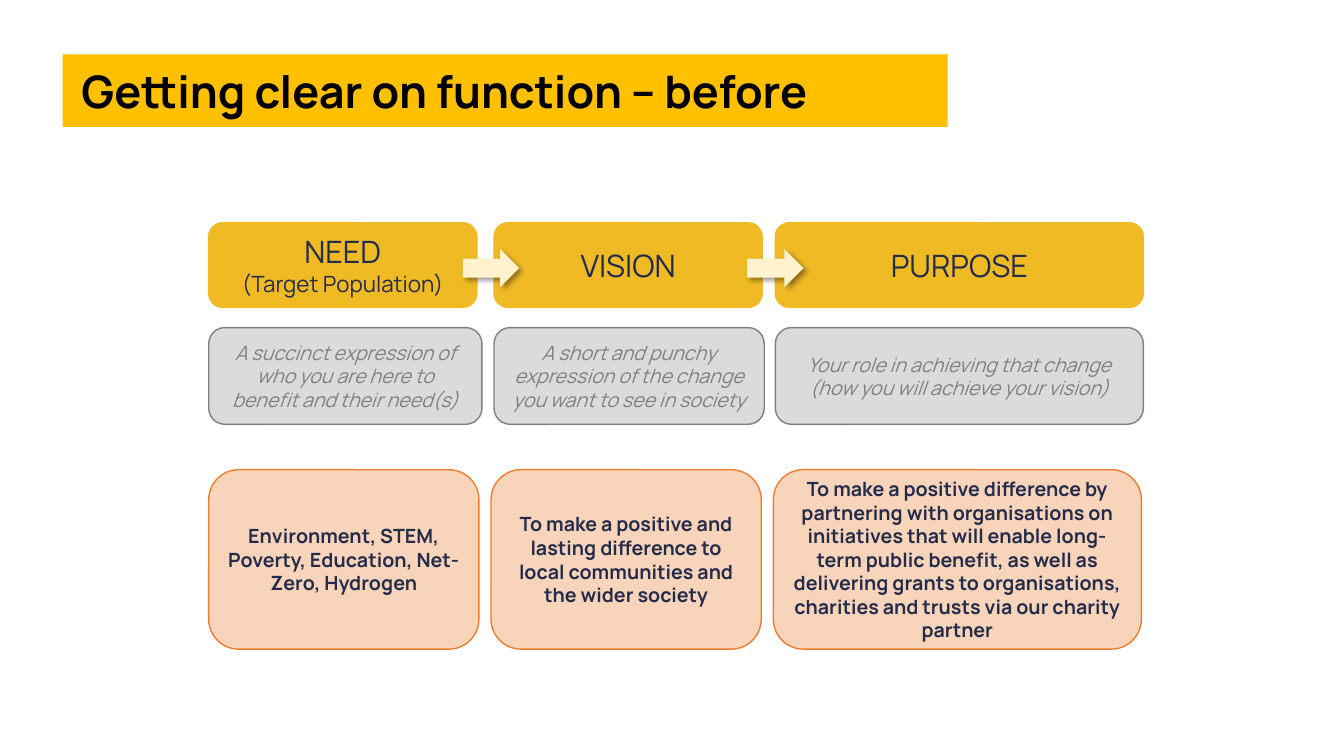
from lxml import etree
from pptx import Presentation
from pptx import util as u
from pptx.dml.color import RGBColor
from pptx.enum import shapes, text
from pptx.oxml.ns import qn

THEME = {
    "font": "Manrope",
    "banner": "FFC000", "title": "000000", "navy": "242C4B",
    "gold": "EFBA24", "arrow": "FFF2CC", "shadow": "000000",
    "grey": "BFBFBF", "grey_dark": "808080",
    "peach": "F4B183", "orange": "ED7D31",
    "title_size": 32, "heading_size": 22, "sub_size": 16, "body_size": 14,
}
KIND = shapes.MSO_SHAPE

deck = Presentation()
deck.slide_width, deck.slide_height = u.Inches(13.33), u.Inches(7.5)
slide = deck.slides.add_slide(deck.slide_layouts[6])


def add_block(kind, box, fill, line=None, opacity=100):
    block = slide.shapes.add_shape(kind, *[u.Inches(length) for length in box])
    block.shadow.inherit = False
    block.fill.solid()
    block.fill.fore_color.rgb = RGBColor.from_string(THEME[fill])
    if opacity < 100:
        colour = block.fill._xPr.find(qn("a:solidFill"))[0]
        etree.SubElement(colour, qn("a:alpha"), val=str(opacity * 1000))
    if line:
        block.line.color.rgb = RGBColor.from_string(THEME[line])
        block.line.width = u.Pt(1)
    else:
        block.line.fill.background()
    return block


def write(frame, lines, colour, align, bold=False, italic=False):
    frame.word_wrap = True
    for number, (words, size) in enumerate(lines):
        paragraph = frame.add_paragraph() if number else frame.paragraphs[0]
        paragraph.alignment = align
        run = paragraph.add_run()
        run.text = words
        run.font.name = THEME["font"]
        run.font.size = u.Pt(THEME[size])
        run.font.bold, run.font.italic = bold, italic
        run.font.color.rgb = RGBColor.from_string(THEME[colour])


# Title banner
add_block(KIND.RECTANGLE, (0.62, 0.54, 8.78, 0.72), "banner")
title = slide.shapes.add_textbox(*[u.Inches(n) for n in (0.71, 0.58, 8.6, 0.64)])
write(title.text_frame, [("Getting clear on function – before", "title_size")],
      "title", text.PP_ALIGN.LEFT, bold=True)

# Rows of the grid: top, height, column lefts, column widths, look, contents
rows = [
    (2.21, 0.84, (2.07, 4.9, 7.69), (2.66, 2.66, 3.65),
     ("gold", "gold", 100), ("navy", False, False),
     [[("NEED", "heading_size"), ("(Target Population)", "sub_size")],
      [("VISION", "heading_size")],
      [("PURPOSE", "heading_size")]]),
    (3.25, 0.96, (2.07, 4.9, 7.69), (2.71, 2.68, 3.65),
     ("grey", "grey_dark", 55), ("grey_dark", False, True),
     [[("A succinct expression of who you are here to benefit and their need(s)",
        "body_size")],
      [("A short and punchy expression of the change you want to see in society",
        "body_size")],
      [("Your role in achieving that change (how you will achieve your vision)",
        "body_size")]]),
    (4.66, 1.78, (2.07, 4.87, 7.67), (2.68, 2.68, 3.65),
     ("peach", "orange", 55), ("navy", True, False),
     [[("Environment, STEM, Poverty, Education, Net-Zero, Hydrogen", "body_size")],
      [("To make a positive and lasting difference to local communities and "
        "the wider society", "body_size")],
      [("To make a positive difference by partnering with organisations on "
        "initiatives that will enable long-term public benefit, as well as "
        "delivering grants to organisations, charities and trusts via our "
        "charity partner", "body_size")]]),
]
for top, height, lefts, widths, look, (colour, bold, italic), contents in rows:
    for left, width, lines in zip(lefts, widths, contents):
        card = add_block(KIND.ROUNDED_RECTANGLE, (left, top, width, height), *look)
        card.text_frame.vertical_anchor = text.MSO_ANCHOR.MIDDLE
        write(card.text_frame, lines, colour, text.PP_ALIGN.CENTER, bold, italic)

# Arrows from need to vision to purpose, with a soft shadow
for left in (4.59, 7.41):
    arrow = add_block(KIND.RIGHT_ARROW, (left, 2.47, 0.56, 0.38), "arrow")
    effects = arrow._element.spPr.find(qn("a:effectLst"))
    shadow = etree.SubElement(
        effects, qn("a:outerShdw"), blurRad=str(u.Pt(4)), dist=str(u.Pt(3)),
        dir=str(45 * 60000), algn="tl", rotWithShape="0")
    tint = etree.SubElement(shadow, qn("a:srgbClr"), val=THEME["shadow"])
    etree.SubElement(tint, qn("a:alpha"), val="40000")

deck.save("out.pptx")
